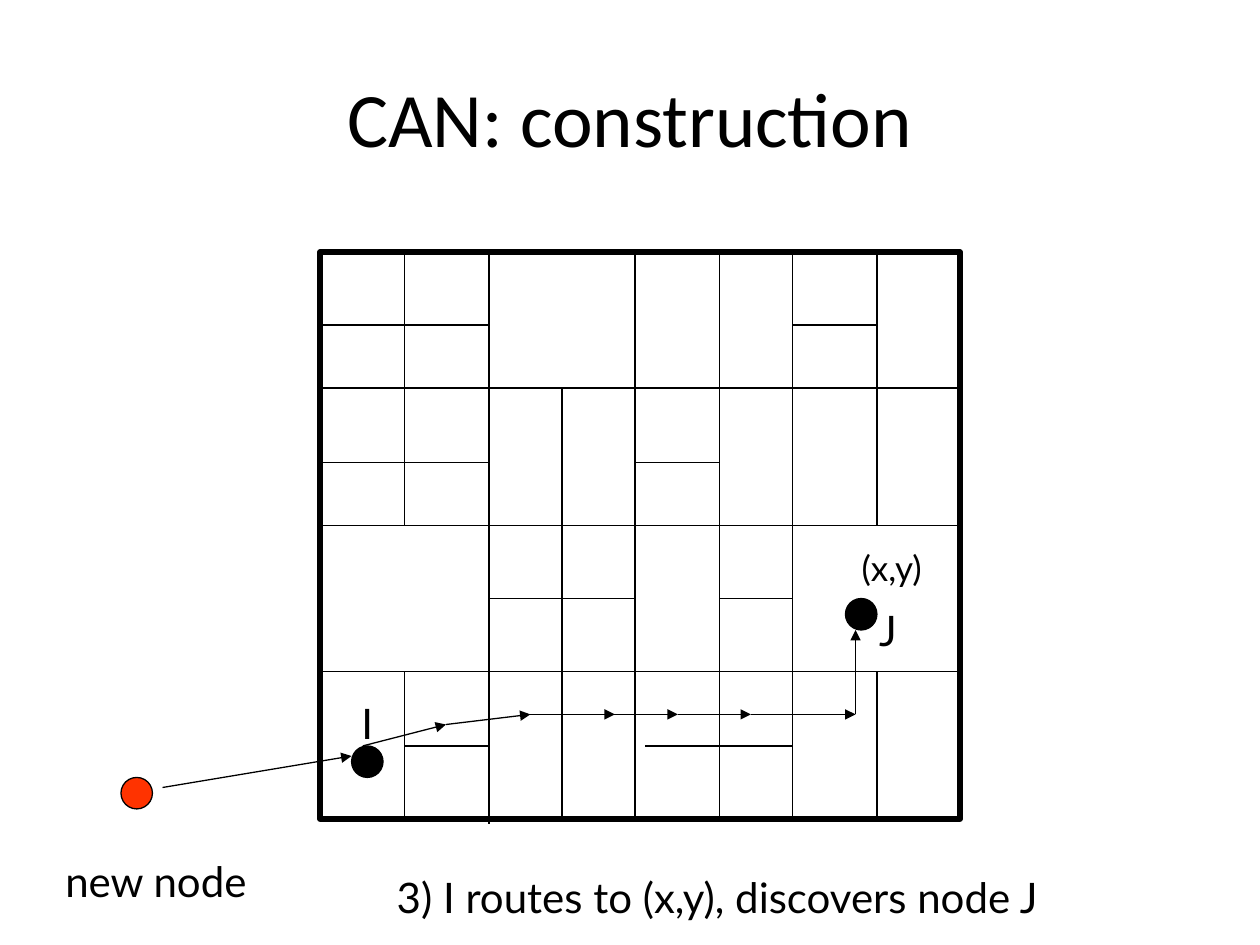
"""Build the slide on CAN construction: a zone grid and the route from I to J."""
from itertools import pairwise

from lxml.etree import SubElement
from pptx import Presentation
from pptx.dml.color import RGBColor
from pptx.enum.shapes import MSO_CONNECTOR as Connector, MSO_SHAPE as Shape
from pptx.enum.text import MSO_ANCHOR as Anchor, MSO_AUTO_SIZE as AutoSize, PP_ALIGN as Align
from pptx.oxml.ns import qn
from pptx.util import Inches, Pt

COLORS = {name: RGBColor.from_string(value) for name, value in
          {"ink": "000000", "new": "FF3300"}.items()}
COLUMNS = [2.54, 3.21, 3.88, 4.46, 5.04, 5.71, 6.29, 6.96, 7.62]
ROWS = [2, 2.58, 3.08, 3.67, 4.17, 4.75, 5.33, 5.92, 6.5]
DOT = 0.25

presentation = Presentation()
presentation.slide_width, presentation.slide_height = Inches(10), Inches(7.5)
slide = presentation.slides.add_slide(presentation.slide_layouts[5])


def add_line(start, end, arrow=False):
    line = slide.shapes.add_connector(Connector.STRAIGHT, *map(Inches, (*start, *end)))
    line.line.color.rgb = COLORS["ink"]
    line.line.width = Pt(0.75)
    if arrow:
        SubElement(line.line._get_or_add_ln(), qn("a:tailEnd"), type="triangle")
    SubElement(line._element.spPr, qn("a:effectLst"))


def add_run(paragraph, text, size, font):
    run = paragraph.add_run()
    run.text = text
    run.font.size = Pt(size)
    run.font.name = font
    run.font.color.rgb = COLORS["ink"]


title = slide.shapes.title
title.left, title.top, title.width, title.height = map(Inches, (0.5, 0.3, 9, 1.25))
title.text_frame.vertical_anchor = Anchor.MIDDLE
title.text_frame.paragraphs[0].alignment = Align.CENTER
add_run(title.text_frame.paragraphs[0], "CAN: construction", 44, "Calibri")

space = slide.shapes.add_shape(Shape.RECTANGLE, *map(Inches, (
    COLUMNS[0], ROWS[0], COLUMNS[-1] - COLUMNS[0], ROWS[-1] - ROWS[0])))
space.shadow.inherit = False
space.fill.background()
space.line.color.rgb = COLORS["ink"]
space.line.width = Pt(3)

for column, top, bottom in [(4, 1.98, 6.52), (2, 2, 6.54), (5, 4.17, 5.58)]:
    add_line((COLUMNS[column], top), (COLUMNS[column], bottom))

for column, first, last in [(6, 0, 8), (1, 0, 2), (1, 2, 4), (1, 6, 8),
                            (3, 2, 4), (3, 4, 6), (3, 6, 8),
                            (5, 0, 2), (5, 2, 4), (5, 6, 8),
                            (7, 0, 2), (7, 2, 4), (7, 6, 8)]:
    add_line((COLUMNS[column], ROWS[first]), (COLUMNS[column], ROWS[last]))

for row, first, last in [(2, 0, 8), (4, 0, 8), (6, 0, 8), (1, 0, 2), (1, 6, 7),
                         (3, 0, 2), (3, 4, 5), (5, 2, 4), (5, 5, 6), (7, 1, 2)]:
    add_line((COLUMNS[first], ROWS[row]), (COLUMNS[last], ROWS[row]))
add_line((5.12, ROWS[7]), (COLUMNS[6], ROWS[7]))

for left, top, color in [(2.79, 5.92, "ink"), (6.71, 4.75, "ink"), (0.96, 6.17, "new")]:
    node = slide.shapes.add_shape(Shape.OVAL, *map(Inches, (left, top, DOT, DOT)))
    node.shadow.inherit = False
    node.fill.solid()
    node.fill.fore_color.rgb = COLORS[color]
    node.line.color.rgb = COLORS["ink"]
    node.line.width = Pt(0.75)

for route in [[(1.29, 6.25), (2.79, 6)],
              [(2.88, 5.92), (3.54, 5.75), (4.21, 5.67), (4.88, 5.67)],
              [(4.79, 5.67), (5.38, 5.67), (5.96, 5.67), (6.79, 5.67), (6.79, 5)]]:
    for start, end in pairwise(route):
        add_line(start, end, arrow=True)

for text, size, left, top, width, height in [
        ("(x,y)", 20, 6.74, 4.29, 0.77, 0.43),
        ("3) I routes to (x,y), discovers node J", 24, 3.05, 6.87, 5.69, 0.5),
        ("I", 24, 2.77, 5.49, 0.33, 0.5),
        ("J", 24, 6.88, 4.75, 0.34, 0.5),
        ("new node", 24, 0.42, 6.74, 1.64, 0.5)]:
    label = slide.shapes.add_textbox(*map(Inches, (left, top, width, height)))
    label.text_frame.word_wrap = False
    label.text_frame.auto_size = AutoSize.SHAPE_TO_FIT_TEXT
    add_run(label.text_frame.paragraphs[0], text, size, "Lato")

presentation.save("out.pptx")
